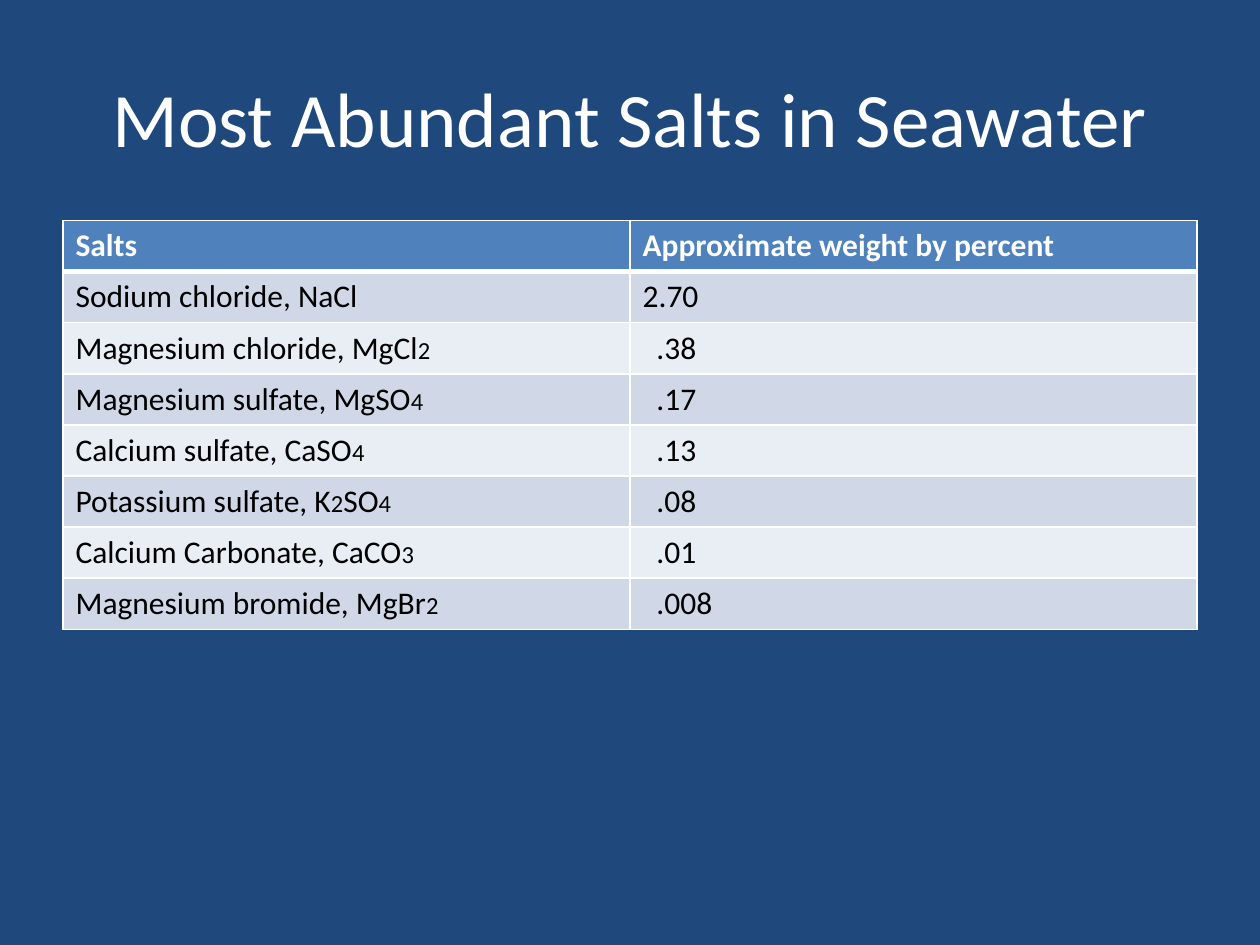
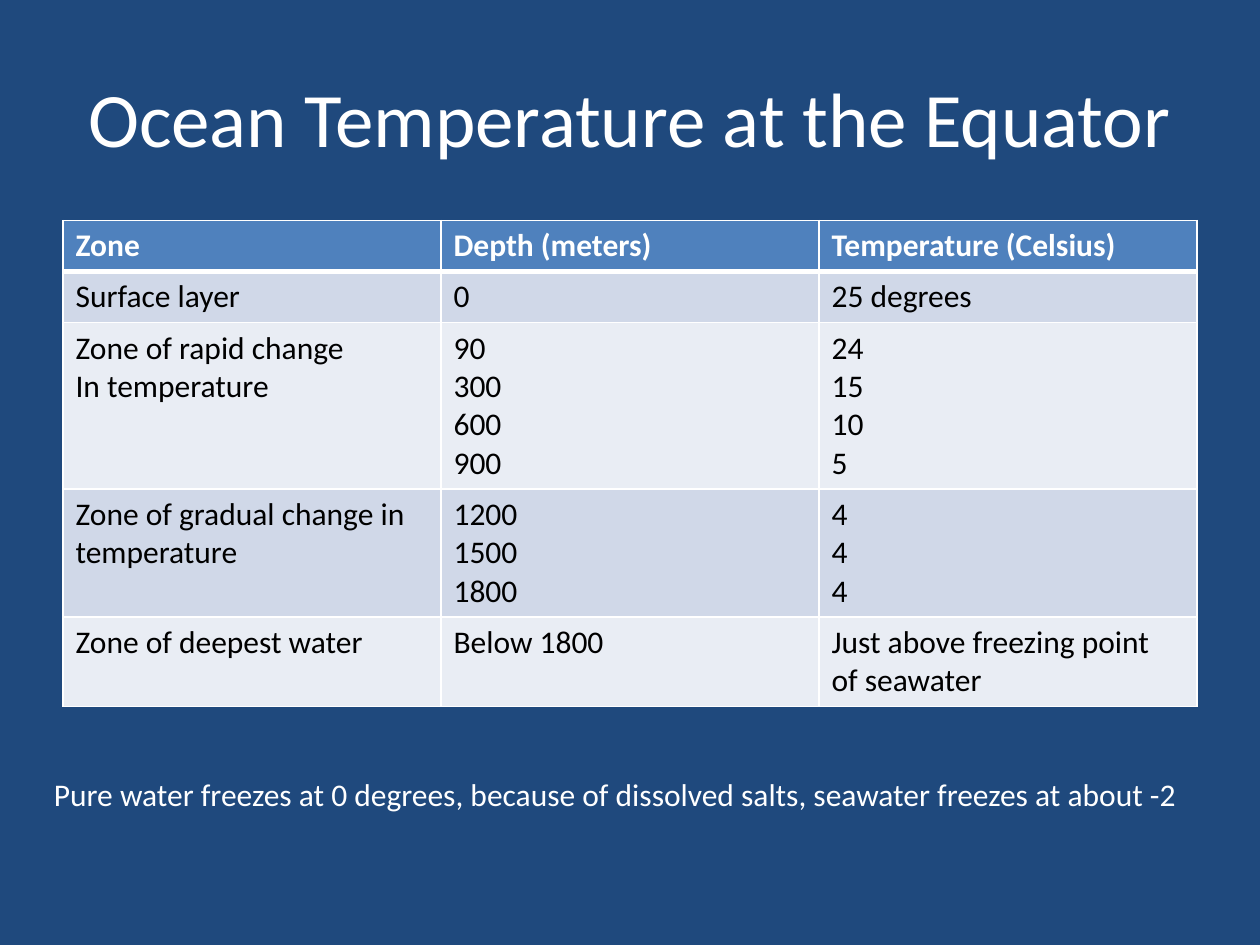
from lxml import etree
from pptx import Presentation
from pptx.dml.color import RGBColor
from pptx.enum.text import MSO_ANCHOR, PP_ALIGN
from pptx.oxml.ns import qn
from pptx.util import Inches, Pt

CENTER = PP_ALIGN.CENTER
MIDDLE = MSO_ANCHOR.MIDDLE
FONT = "Calibri"
NAVY = "1F497D"
BLUE = "4F81BD"
WHITE = "FFFFFF"
BLACK = "000000"
BANDS = ["E9EDF4", "D0D8E8"]
LEFT, WIDTH = 0.5, 9
PAD, LINE = 0.1, 0.305
INDENT = 0.11

SALTS = [
    ["Salts", "Approximate weight by percent"],
    ["Sodium chloride, NaCl", "2.70"],
    ["Magnesium chloride, MgCl|2", ".38"],
    ["Magnesium sulfate, MgSO|4", ".17"],
    ["Calcium sulfate, CaSO|4", ".13"],
    ["Potassium sulfate, K|2|SO|4", ".08"],
    ["Calcium Carbonate, CaCO|3", ".01"],
    ["Magnesium bromide, MgBr|2", ".008"],
]
ZONES = [
    ["Zone", "Depth (meters)", "Temperature (Celsius)"],
    ["Surface layer", "0", "25 degrees"],
    ["Zone of rapid change\nIn temperature", "90\n300\n600\n900", "24\n15\n10\n5"],
    ["Zone of gradual change in\ntemperature", "1200\n1500\n1800", "4\n4\n4"],
    ["Zone of deepest water", "Below 1800", "Just above freezing point\nof seawater"],
]
NOTE = ("Pure water freezes at 0 degrees, because of dissolved salts, "
        "seawater freezes at about -2")


def paint(fill, color):
    fill.solid()
    fill.fore_color.rgb = RGBColor.from_string(color)


def add_run(para, text, size, color, bold=False):
    run = para.add_run()
    run.text = text
    run.font.name = FONT
    run.font.size = Pt(size)
    run.font.bold = bold
    run.font.color.rgb = RGBColor.from_string(color)


def add_title(slide, text):
    title = slide.shapes.title
    title.left, title.top = Inches(LEFT), Inches(0.3)
    title.width, title.height = Inches(WIDTH), Inches(1.25)
    title.text_frame.vertical_anchor = MIDDLE
    para = title.text_frame.paragraphs[0]
    para.alignment = CENTER
    add_run(para, text, 44, WHITE)


def add_edge(cell, side, points):
    edge = etree.SubElement(cell._tc.get_or_add_tcPr(), qn(f"a:ln{side}"), w=str(Pt(points)))
    fill = etree.SubElement(edge, qn("a:solidFill"))
    etree.SubElement(fill, qn("a:srgbClr"), val=WHITE)


def fill_cell(cell, text, row):
    head = row == 0
    for side, thick in (("L", False), ("R", False), ("T", row == 1), ("B", head)):
        add_edge(cell, side, 3 if thick else 1)
    paint(cell.fill, BLUE if head else BANDS[row % 2])
    cell.margin_left = Inches(PAD + INDENT if text.startswith(".") else PAD)
    frame = cell.text_frame
    for i, line in enumerate(text.split("\n")):
        para = frame.add_paragraph() if i else frame.paragraphs[0]
        for j, part in enumerate(line.split("|")):
            add_run(para, part, 14 if j % 2 else 18, WHITE if head else BLACK, head)


def add_grid(slide, rows):
    count = len(rows[0])
    highs = [PAD + LINE * max(text.count("\n") + 1 for text in row) for row in rows]
    frame = slide.shapes.add_table(len(rows), count, Inches(LEFT), Inches(1.75),
                                   Inches(WIDTH), Inches(sum(highs)))
    grid = frame.table
    for col in grid.columns:
        col.width = Inches(WIDTH / count)
    for r, row in enumerate(rows):
        grid.rows[r].height = Inches(highs[r])
        for c, text in enumerate(row):
            fill_cell(grid.cell(r, c), text, r)


def add_note(slide, text):
    box = slide.shapes.add_textbox(Inches(0.33), Inches(6.1), Inches(9.3), Inches(0.4))
    box.text_frame.word_wrap = False
    add_run(box.text_frame.paragraphs[0], text, 18, WHITE)


def add_page(deck, title, rows):
    slide = deck.slides.add_slide(deck.slide_layouts.get_by_name("Title Only"))
    add_title(slide, title)
    add_grid(slide, rows)
    return slide


def main():
    deck = Presentation()
    deck.slide_width, deck.slide_height = Inches(10), Inches(7.5)
    paint(deck.slide_master.background.fill, NAVY)
    add_page(deck, "Most Abundant Salts in Seawater", SALTS)
    ocean = add_page(deck, "Ocean Temperature at the Equator", ZONES)
    add_note(ocean, NOTE)
    deck.save("out.pptx")


if __name__ == "__main__":
    main()
